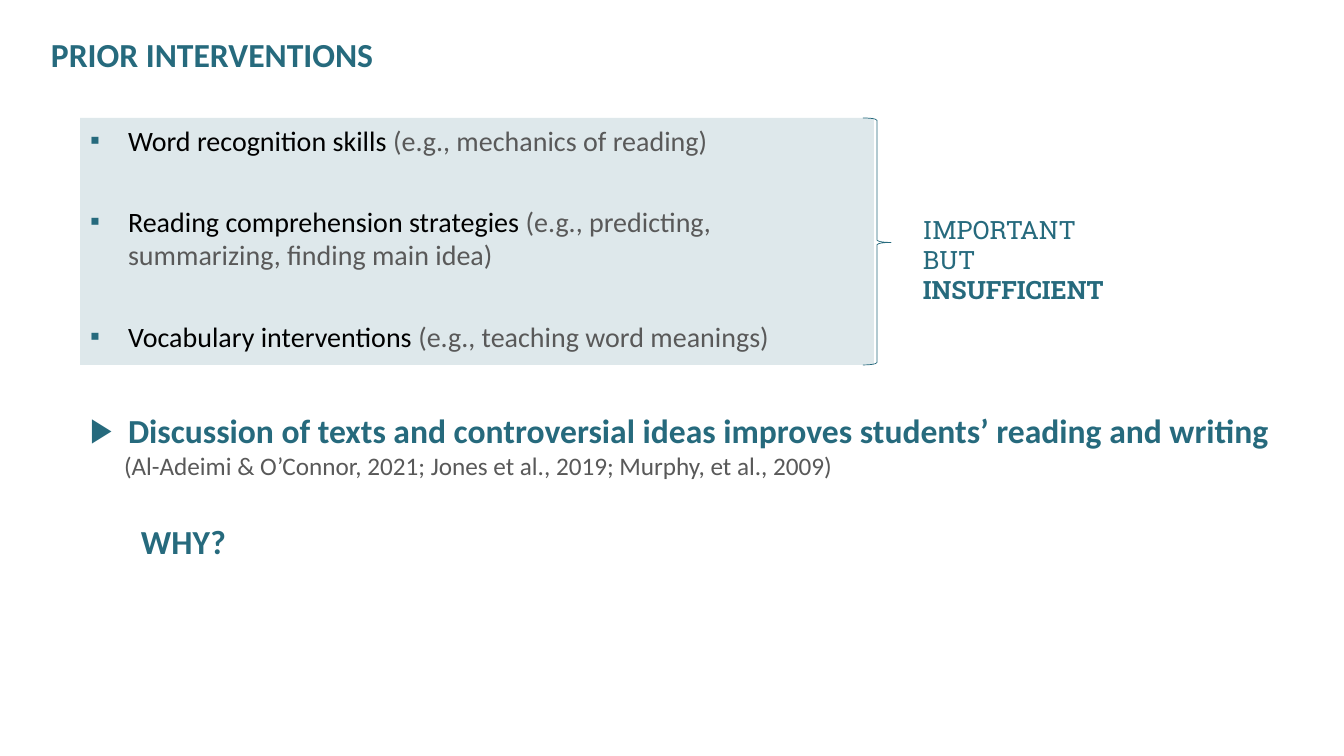
import dataclasses
import typing

import pptx
import pptx.dml.color
import pptx.enum.shapes
import pptx.enum.text
import pptx.oxml.ns
import pptx.util
from lxml import etree

EMU_PER_PX = 9071.43
TEAL = "266A7D"
GRAY = "595959"
BLACK = "000000"


@dataclasses.dataclass
class Run:
    text: str
    color: str
    bold: bool = False
    break_before: bool = False


@dataclasses.dataclass
class Line:
    runs: list[Run]
    size: int
    font: str = "Calibri"
    bullet: str = ""
    left: int = 0
    space_before: int = 0


def px(length: int) -> int:
    return round(length * EMU_PER_PX)


def rgb(value: str) -> pptx.dml.color.RGBColor:
    return pptx.dml.color.RGBColor.from_string(value)


def add_xml(parent: typing.Any, tag: str, **attributes: str) -> typing.Any:
    return etree.SubElement(parent, pptx.oxml.ns.qn(tag), **attributes)


def place(shape: typing.Any, left: int, top: int, width: int, height: int) -> None:
    shape.left, shape.top = px(left), px(top)
    shape.width, shape.height = px(width), px(height)


def set_bullet(paragraph: typing.Any, line: Line) -> None:
    properties = paragraph._p.get_or_add_pPr()
    properties.set("marL", str(px(line.left)))
    properties.set("indent", str(-px(line.left) if line.bullet else 0))
    if line.bullet:
        add_xml(add_xml(properties, "a:buClr"), "a:srgbClr", val=TEAL)
        add_xml(properties, "a:buChar", char=line.bullet)
    else:
        add_xml(properties, "a:buNone")


def write_text(shape: typing.Any, lines: list[Line], margin_x: int = 10, margin_top: int = 5) -> None:
    frame = shape.text_frame
    frame.word_wrap = True
    frame.auto_size = pptx.enum.text.MSO_AUTO_SIZE.NONE
    frame.vertical_anchor = pptx.enum.text.MSO_ANCHOR.TOP
    frame.margin_left = frame.margin_right = px(margin_x)
    frame.margin_top, frame.margin_bottom = px(margin_top), px(4)
    for index, line in enumerate(lines):
        paragraph = frame.add_paragraph() if index else frame.paragraphs[0]
        set_bullet(paragraph, line)
        paragraph.alignment = pptx.enum.text.PP_ALIGN.LEFT
        paragraph.space_before = pptx.util.Pt(line.space_before)
        for part in line.runs:
            if part.break_before:
                paragraph.add_line_break()
            run = paragraph.add_run()
            run.text = part.text
            run.font.name = line.font
            run.font.size = pptx.util.Pt(line.size)
            run.font.bold = part.bold
            run.font.color.rgb = rgb(part.color)


def skill_line(skill: str, examples: list[str], space_before: int = 34) -> Line:
    runs = [Run(skill, BLACK)]
    runs += [Run(text, GRAY, break_before=index > 0) for index, text in enumerate(examples)]
    return Line(runs, 20, bullet="▪", left=38, space_before=space_before)


def add_brace(slide: typing.Any) -> None:
    brace = slide.shapes.add_shape(
        pptx.enum.shapes.MSO_SHAPE.RIGHT_BRACE, px(863), px(118), px(28), px(247))
    brace.shadow.inherit = False
    brace.adjustments[0], brace.adjustments[1] = 0.083, 0.504
    brace.fill.background()
    brace.line.color.rgb = rgb(TEAL)
    brace.line.width = pptx.util.Pt(0.5)


def main() -> None:
    presentation = pptx.Presentation()
    presentation.slide_width, presentation.slide_height = px(1344), px(756)
    slide = presentation.slides.add_slide(presentation.slide_layouts[3])
    title, discussion, skills = list(slide.placeholders)[:3]

    place(title, 44, 30, 1060, 47)
    write_text(title, [Line([Run("PRIOR INTERVENTIONS", TEAL, bold=True)], 24)], margin_x=7, margin_top=4)

    place(discussion, 80, 364, 1234, 392)
    claim = "Discussion of texts and controversial ideas improves students’ reading and writing"
    sources = "(Al-Adeimi & O’Connor, 2021; Jones et al., 2019; Murphy, et al., 2009)"
    write_text(discussion, [
        Line([Run(claim, TEAL, bold=True)], 24, bullet="▶", left=38),
        Line([Run(sources, GRAY)], 18, left=34),
        Line([Run("WHY?", TEAL, bold=True)], 24, left=51, space_before=29),
    ], margin_top=46)

    place(skills, 80, 118, 794, 247)
    skills.fill.solid()
    skills.fill.fore_color.rgb = rgb(TEAL)
    color = skills._element.spPr.find(".//" + pptx.oxml.ns.qn("a:srgbClr"))
    add_xml(color, "a:alpha", val="15000")
    write_text(skills, [
        skill_line("Word recognition skills ", ["(e.g., mechanics of reading)"], space_before=0),
        skill_line("Reading comprehension strategies ",
                   ["(e.g., predicting,", "summarizing, finding main idea)"]),
        skill_line("Vocabulary interventions ", ["(e.g., teaching word meanings)"]),
    ])

    add_brace(slide)

    verdict = slide.shapes.add_textbox(px(913), px(209), px(219), px(72))
    write_text(verdict, [
        Line([Run("IMPORTANT BUT", TEAL)], 18, font="Roboto Slab"),
        Line([Run("INSUFFICIENT", TEAL, bold=True)], 18, font="Roboto Slab"),
    ])

    presentation.save("out.pptx")


if __name__ == "__main__":
    main()
